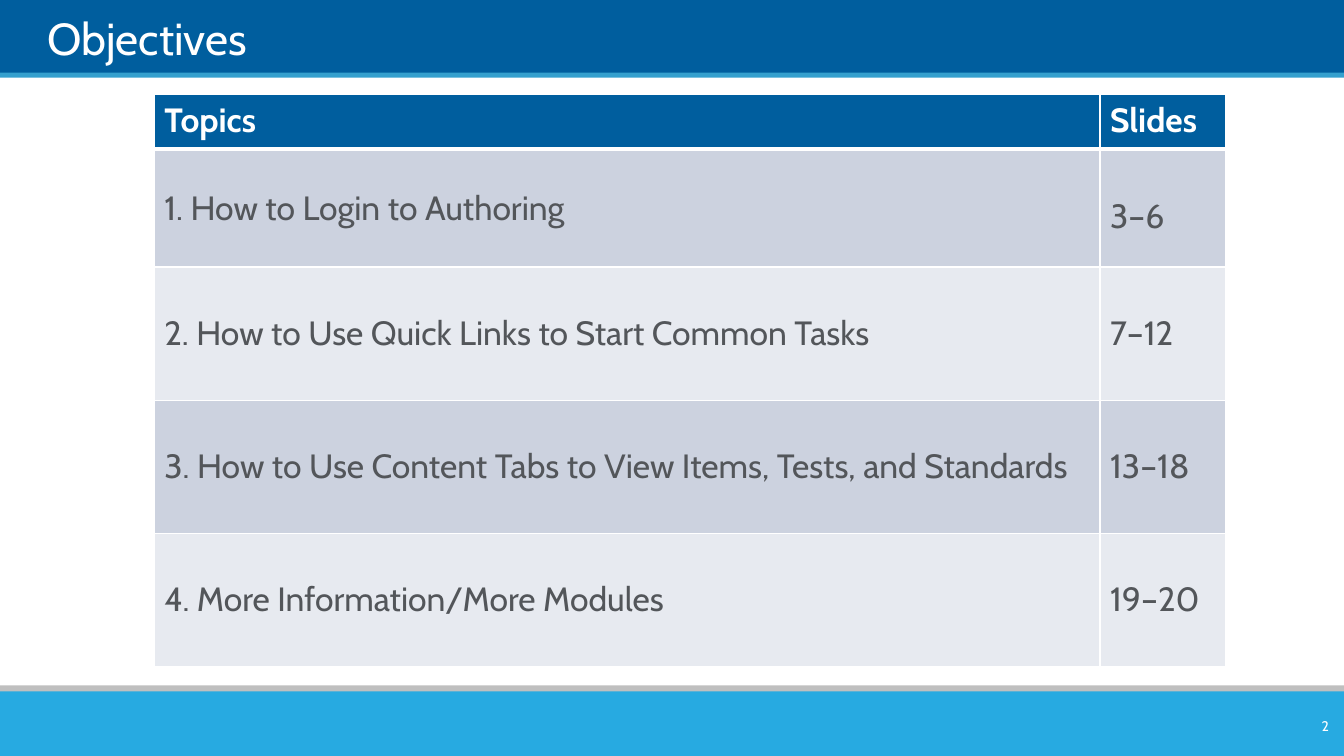
from lxml.etree import SubElement
from pptx import Presentation
from pptx.dml.color import RGBColor
from pptx.enum.shapes import MSO_SHAPE
from pptx.enum.text import MSO_ANCHOR, MSO_AUTO_SIZE, PP_ALIGN
from pptx.oxml.ns import qn
from pptx.util import Inches, Pt

FONT = "Cabin"
WHITE, NAVY, GREY = "FFFFFF", "005E9E", "53565A"
ROW_FILLS = ["CCD2DF", "E7EAF0"]

# Left, top, width, height and colour of the header and footer bands
BANDS = [
    (0, -0.01, 13.33, 0.75, NAVY),
    (0, 0.72, 13.33, 0.05, "35A0CE"),
    (0, 6.8, 13.33, 0.14, "BFBFBF"),
    (0, 6.86, 13.33, 0.64, "27AAE1"),
]
COLUMN_WIDTHS = [9.38, 1.25]
ROW_HEIGHTS = [0.54, 1.17, 1.32, 1.32, 1.32]
ROWS = [
    ("Topics", "Slides"),
    ("1. How to Login to Authoring", "3–6"),
    ("2. How to Use Quick Links to Start Common Tasks", "7–12"),
    ("3. How to Use Content Tabs to View Items, Tests, and Standards", "13–18"),
    ("4. More Information/More Modules", "19–20"),
]


def rgb(value):
    return RGBColor.from_string(value)


def set_text(tf, text, size, color, bold=False, align=PP_ALIGN.LEFT):
    tf.text = text
    p = tf.paragraphs[0]
    p.alignment = align
    font = p.runs[0].font
    font.name, font.size, font.bold = FONT, Pt(size), bold
    font.color.rgb = rgb(color)


def add_band(s, left, top, width, height, color):
    band = s.shapes.add_shape(MSO_SHAPE.RECTANGLE, Inches(left), Inches(top),
                              Inches(width), Inches(height))
    band.shadow.inherit = False
    band.fill.solid()
    band.fill.fore_color.rgb = rgb(color)
    band.line.fill.background()


def add_title(s, text):
    title = s.shapes.title
    title.left, title.top = Inches(0.47), Inches(0.07)
    title.width, title.height = Inches(12.43), Inches(0.57)
    tf = title.text_frame
    tf.margin_left = tf.margin_right = tf.margin_top = tf.margin_bottom = 0
    tf.auto_size = MSO_AUTO_SIZE.NONE
    tf.vertical_anchor = MSO_ANCHOR.BOTTOM
    set_text(tf, text, 32, WHITE)
    # Bring the title in front of the bands
    s.shapes._spTree.append(title._element)


def set_borders(cell, top, bottom):
    tcPr = cell._tc.get_or_add_tcPr()
    for side, width in (("L", 1), ("R", 1), ("T", top), ("B", bottom)):
        ln = SubElement(tcPr, qn(f"a:ln{side}"), w=str(Pt(width)))
        fill = SubElement(ln, qn("a:solidFill"))
        SubElement(fill, qn("a:srgbClr"), val=WHITE)


def add_topics_table(s):
    table = s.shapes.add_table(
        len(ROWS), len(COLUMN_WIDTHS), Inches(1.53), Inches(0.94),
        Inches(sum(COLUMN_WIDTHS)), Inches(sum(ROW_HEIGHTS))).table
    for column, width in zip(table.columns, COLUMN_WIDTHS):
        column.width = Inches(width)
    for i, (row, height) in enumerate(zip(table.rows, ROW_HEIGHTS)):
        row.height = Inches(height)
        header = i == 0
        for cell, text in zip(row.cells, ROWS[i]):
            set_borders(cell, 3 if i == 1 else 1, 3 if header else 1)
            cell.fill.solid()
            cell.fill.fore_color.rgb = rgb(NAVY if header else ROW_FILLS[(i - 1) % 2])
            cell.vertical_anchor = MSO_ANCHOR.TOP if header else MSO_ANCHOR.MIDDLE
            set_text(cell.text_frame, text, 24, WHITE if header else GREY, header)
    # The first page range sits slightly below the middle of its row
    table.cell(1, 1).margin_top = Inches(0.21)


def add_slide_number(s, number):
    tf = s.shapes.add_textbox(Inches(12.51), Inches(7.05),
                              Inches(0.77), Inches(0.3)).text_frame
    tf.word_wrap = True
    tf.vertical_anchor = MSO_ANCHOR.MIDDLE
    set_text(tf, number, 10, WHITE, align=PP_ALIGN.RIGHT)


def main():
    prs = Presentation()
    prs.slide_width, prs.slide_height = Inches(13.33), Inches(7.5)
    s = prs.slides.add_slide(prs.slide_layouts[5])
    for band in BANDS:
        add_band(s, *band)
    add_title(s, "Objectives")
    add_topics_table(s)
    add_slide_number(s, "2")
    prs.save("out.pptx")


if __name__ == "__main__":
    main()
